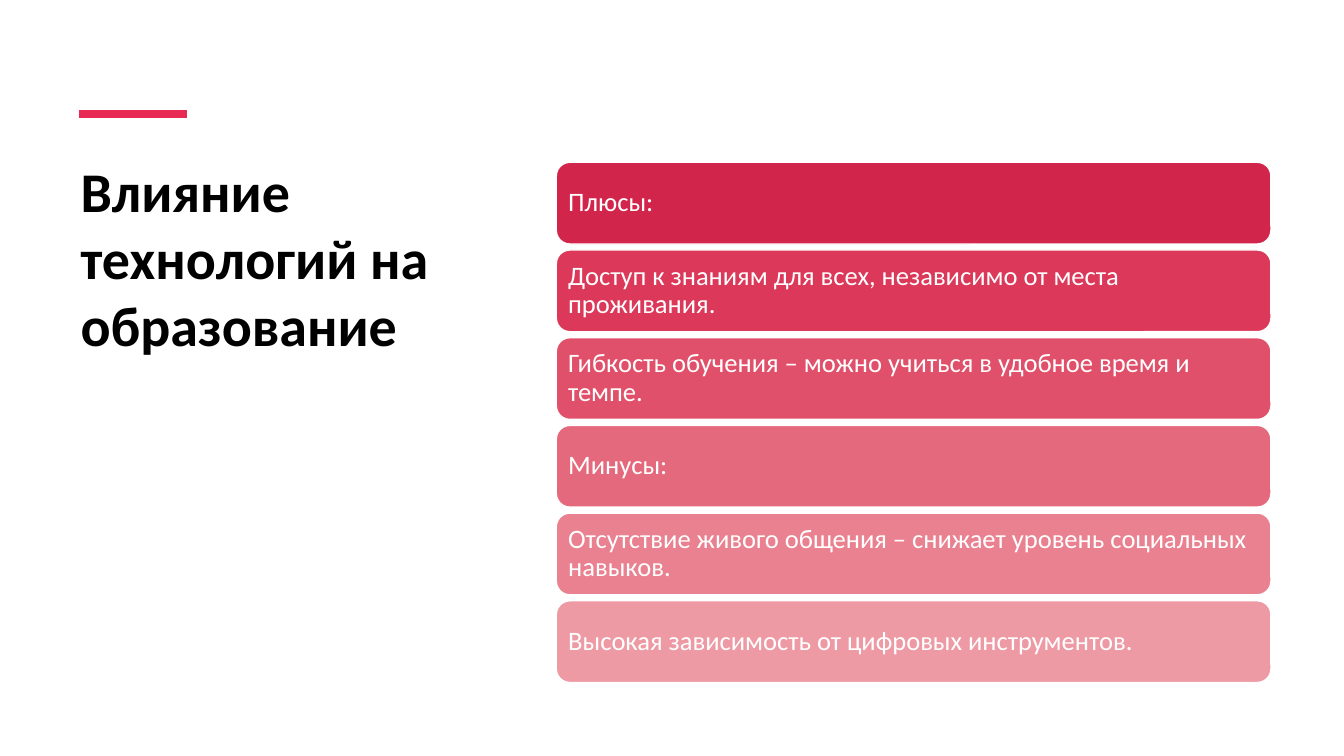
from dataclasses import dataclass

import pptx
import pptx.dml.color
import pptx.enum.shapes
import pptx.enum.text
import pptx.oxml
import pptx.oxml.ns
import pptx.presentation
import pptx.slide
import pptx.text.text
import pptx.util
from pptx.util import Cm


@dataclass(frozen=True)
class Theme:
    font: str = "Calibri"
    title_size: int = 40
    card_size: int = 19
    title_color: str = "000000"
    card_text: str = "FFFFFF"
    card_line: str = "FFFFFF"
    accent: str = "E72954"


@dataclass(frozen=True)
class Card:
    text: str
    fill: str


THEME = Theme()
TITLE = "Влияние технологий на образование"
CARDS = [
    Card("Плюсы:", "D2254C"),
    Card("Доступ к знаниям для всех, независимо от места проживания.", "DC3859"),
    Card("Гибкость обучения – можно учиться в удобное время и темпе.", "E1506A"),
    Card("Минусы:", "E5697D"),
    Card("Отсутствие живого общения – снижает уровень социальных навыков.", "EA8190"),
    Card("Высокая зависимость от цифровых инструментов.", "EE9AA4"),
]
CARD_LEFT, CARD_TOP = 14.02, 4.09
CARD_WIDTH, CARD_HEIGHT = 18.01, 2.06
CARD_STEP = 2.21


def rgb(value: str) -> pptx.dml.color.RGBColor:
    return pptx.dml.color.RGBColor.from_string(value)


def write_text(tf: pptx.text.text.TextFrame, text: str, size: int, color: str,
               bold: bool = False) -> None:
    tf.word_wrap = True
    tf.text = text
    p = tf.paragraphs[0]
    p.alignment = pptx.enum.text.PP_ALIGN.LEFT
    font = p.runs[0].font
    font.name = THEME.font
    font.size = pptx.util.Pt(size)
    font.bold = bold
    font.color.rgb = rgb(color)


def add_title(s: pptx.slide.Slide) -> None:
    sp = s.shapes.add_textbox(Cm(1.78), Cm(3.81), Cm(10.21), Cm(10.9))
    write_text(sp.text_frame, TITLE, THEME.title_size, THEME.title_color, bold=True)


def add_accent_line(s: pptx.slide.Slide) -> None:
    line = s.shapes.add_connector(
        pptx.enum.shapes.MSO_CONNECTOR.STRAIGHT, Cm(1.98), Cm(2.87), Cm(4.7), Cm(2.87))
    line.line.color.rgb = rgb(THEME.accent)
    line.line.width = pptx.util.Pt(6)
    effects = pptx.oxml.parse_xml(f"<a:effectLst {pptx.oxml.ns.nsdecls('a')}/>")
    line._element.spPr.append(effects)


def add_card(s: pptx.slide.Slide, card: Card, top: float) -> None:
    sp = s.shapes.add_shape(
        pptx.enum.shapes.MSO_SHAPE.ROUNDED_RECTANGLE,
        Cm(CARD_LEFT), Cm(top), Cm(CARD_WIDTH), Cm(CARD_HEIGHT))
    sp.shadow.inherit = False
    sp.fill.solid()
    sp.fill.fore_color.rgb = rgb(card.fill)
    sp.line.color.rgb = rgb(THEME.card_line)
    sp.line.width = pptx.util.Pt(1)
    tf = sp.text_frame
    tf.margin_left = tf.margin_right = tf.margin_top = tf.margin_bottom = Cm(0.2)
    tf.vertical_anchor = pptx.enum.text.MSO_ANCHOR.MIDDLE
    write_text(tf, card.text, THEME.card_size, THEME.card_text)
    tf.paragraphs[0].line_spacing = 0.9


def main() -> None:
    prs = pptx.Presentation()
    prs.slide_width, prs.slide_height = Cm(33.87), Cm(19.05)
    s = prs.slides.add_slide(prs.slide_layouts[6])
    add_title(s)
    add_accent_line(s)
    for i, card in enumerate(CARDS):
        add_card(s, card, CARD_TOP + i * CARD_STEP)
    prs.save("out.pptx")


if __name__ == "__main__":
    main()
